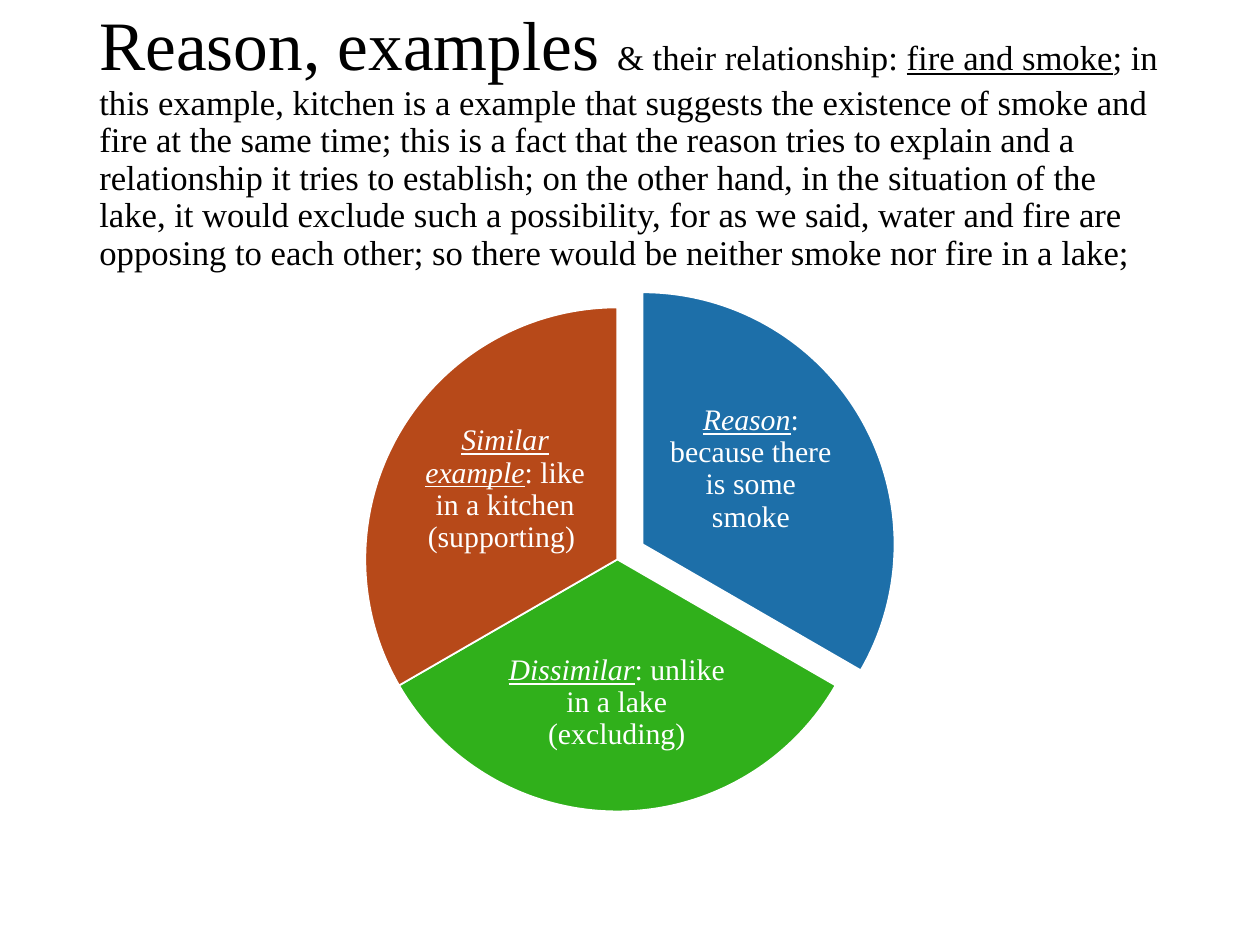
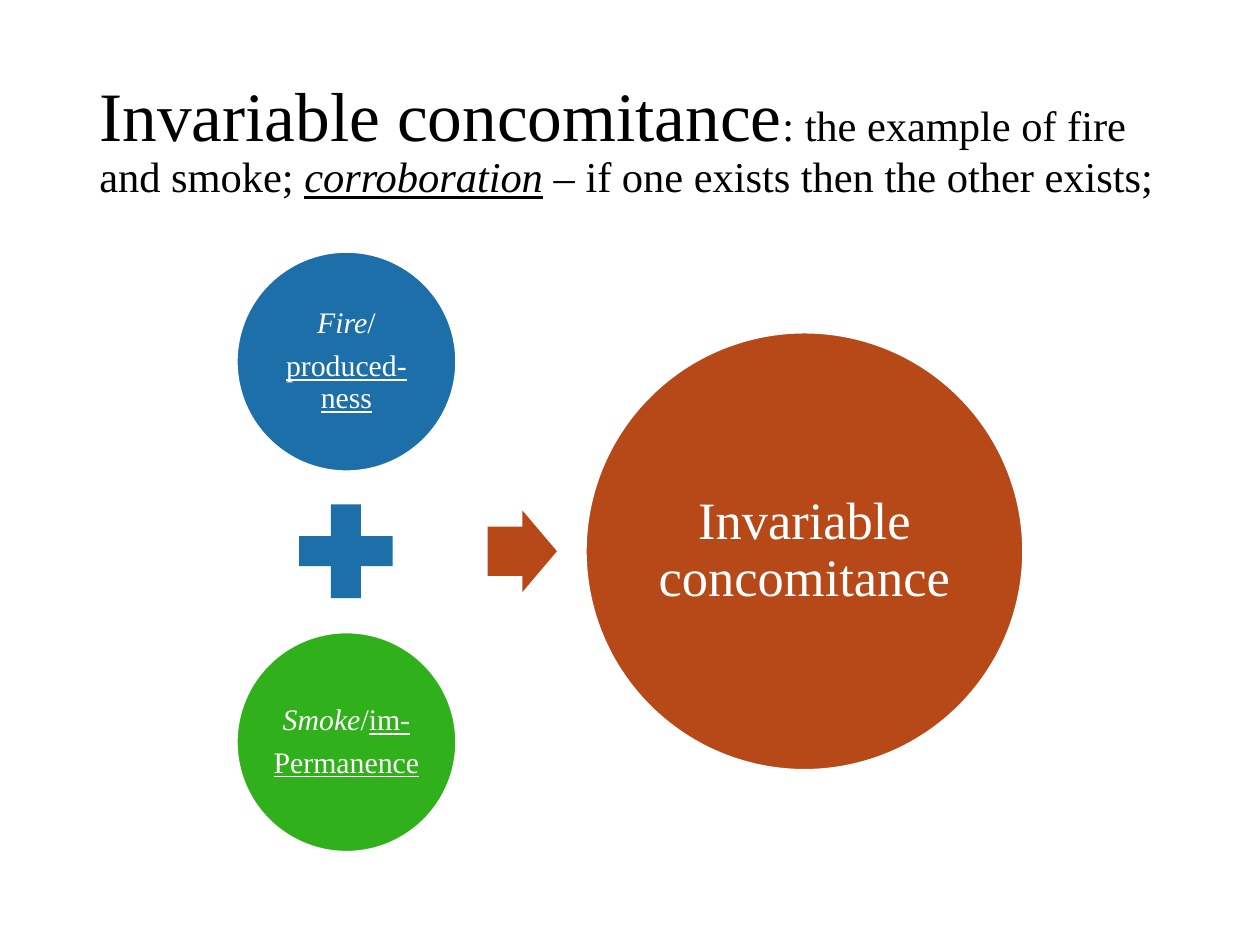
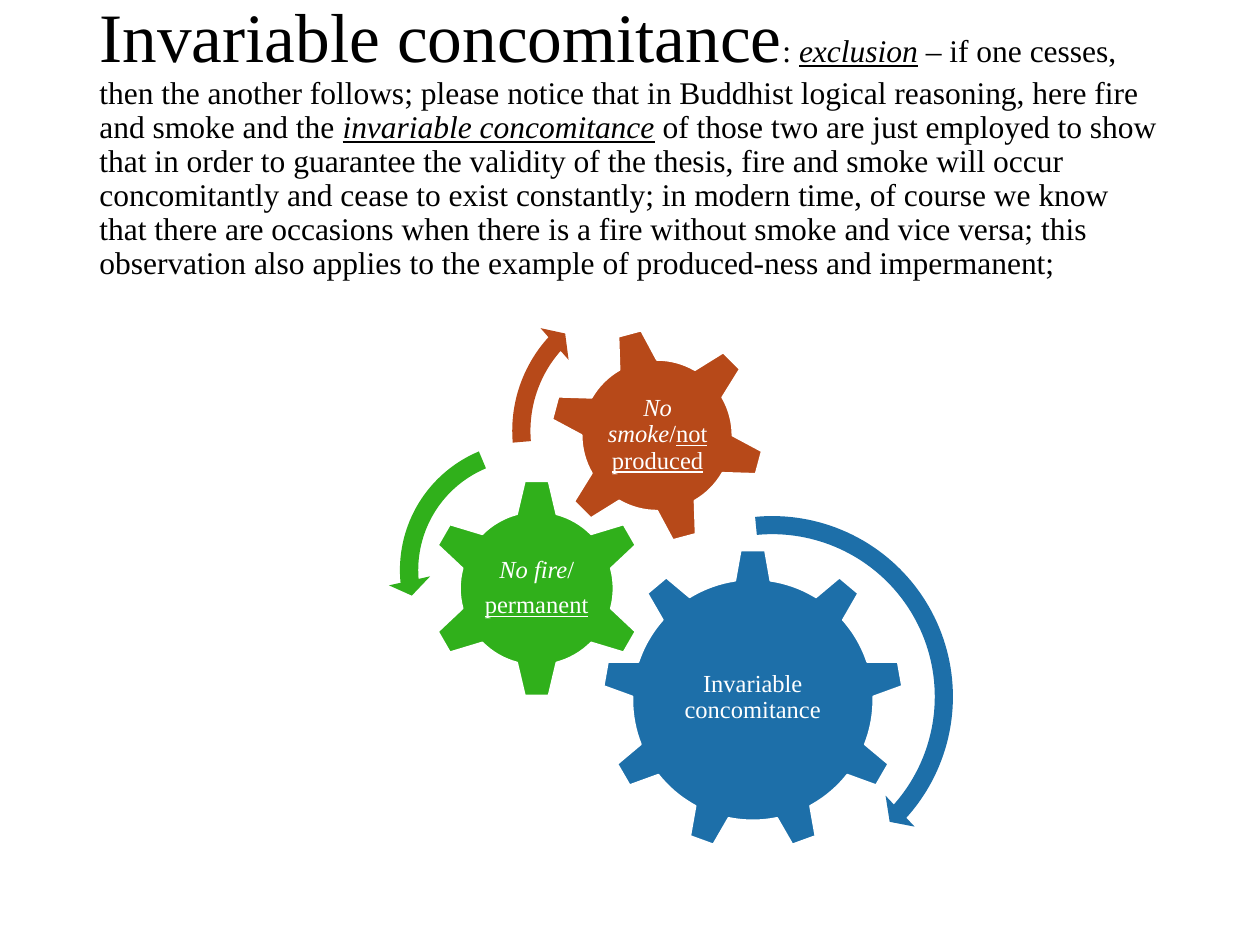
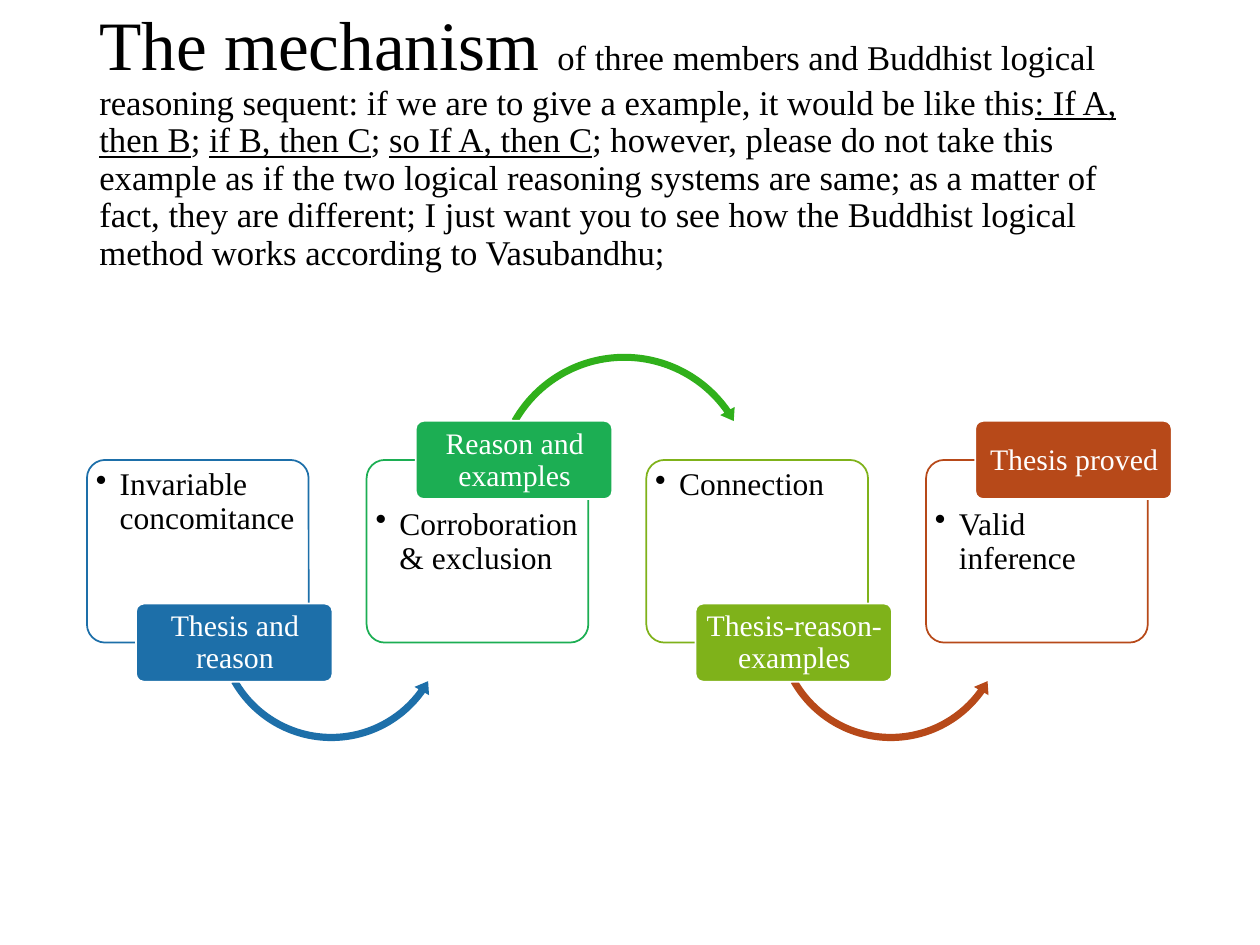
from dataclasses import dataclass
from math import sqrt

from lxml.etree import SubElement
from pptx import Presentation
from pptx.dml.color import RGBColor
from pptx.enum.shapes import MSO_SHAPE as Shape
from pptx.enum.text import MSO_ANCHOR as Anchor, PP_ALIGN as Align
from pptx.oxml.ns import qn
from pptx.util import Pt

PX = 9144  # EMU; 100 px to the inch


@dataclass(frozen=True)
class Theme:
    font: str = "Times New Roman"
    black: str = "000000"
    white: str = "FFFFFF"
    blue: str = "1D6FA9"
    green: str = "30B01B"
    rust: str = "B74919"
    emerald: str = "1CAE53"
    lime: str = "7FB21A"
    title_size: float = 39.6
    label_size: int = 17
    gear_size: int = 14
    result_size: int = 30
    bullet_size: int = 18
    line_spacing: float = 0.9
    outline: int = 1


THEME = Theme()


def span(text, **style):
    """Pair text with its format: size, color, italic, underline."""
    return text, style


def under(text):
    return span(text, underline=True)


def slanted(text):
    return span(text, italic=True)


def term(text):
    return span(text, italic=True, underline=True)


class Deck:
    def __init__(self, theme):
        self.theme = theme
        self.file = Presentation()
        self.file.slide_width, self.file.slide_height = 1000 * PX, 750 * PX
        self.shapes = None

    def page(self, heading, detail, detail_size):
        """Start a slide with its title; the diagram that follows is grouped."""
        page = self.file.slides.add_slide(self.file.slide_layouts[6])
        self.shapes = page.shapes
        lead = span(heading, size=self.theme.title_size)
        self.text((69, 40, 862, 145), [[lead, *detail]], detail_size,
                  color=self.theme.black, align=Align.LEFT, inset=(10, 5), gap=0)
        self.shapes = page.shapes.add_group_shape().shapes

    def text(self, area, paras, size, color=None, align=Align.CENTER,
             anchor=Anchor.MIDDLE, inset=(2, 2), gap=0.35, bullet=False):
        """Add paragraphs, each a list of plain strings and spans."""
        box = self.shapes.add_textbox(*(n * PX for n in area))
        frame = box.text_frame
        frame.word_wrap = True
        frame.vertical_anchor = anchor
        frame.margin_left = frame.margin_right = inset[0] * PX
        frame.margin_top = frame.margin_bottom = inset[1] * PX
        for index, parts in enumerate(paras):
            para = frame.add_paragraph() if index else frame.paragraphs[0]
            para.alignment = align
            para.line_spacing = self.theme.line_spacing
            para.space_after = Pt(gap * size)
            if bullet:
                self.bullet(para)
            for part in parts:
                words, style = span(part) if isinstance(part, str) else part
                self.run(para, words, **{"size": size, "color": color or self.theme.white, **style})

    def run(self, para, text, size, color, italic=False, underline=False):
        run = para.add_run()
        run.text = text
        font = run.font
        font.name, font.size = self.theme.font, Pt(size)
        font.italic, font.underline = italic, underline
        font.color.rgb = RGBColor.from_string(color)

    def bullet(self, para):
        props = para._p.get_or_add_pPr()
        props.set("marL", str(19 * PX))
        props.set("indent", str(-19 * PX))
        SubElement(props, qn("a:buChar")).set("char", "•")

    def shape(self, kind, area, fill, line=None, adjust=(), turn=0, opacity=100):
        item = self.shapes.add_shape(kind, *(n * PX for n in area))
        item.shadow.inherit = False
        item.rotation = turn
        for index, value in enumerate(adjust):
            item.adjustments[index] = value
        item.fill.solid()
        item.fill.fore_color.rgb = RGBColor.from_string(fill)
        if opacity < 100:
            tint = item._element.spPr.find(qn("a:solidFill"))[0]
            SubElement(tint, qn("a:alpha")).set("val", str(opacity * 1000))
        if line:
            item.line.color.rgb = RGBColor.from_string(line)
            item.line.width = Pt(self.theme.outline)
        else:
            item.line.fill.background()

    def slice(self, left, top, size, start, sweep, fill):
        angles = [angle % 360 * 0.6 for angle in (start, start + sweep)]
        self.shape(Shape.PIE, (left, top, size, size), fill, self.theme.white, angles)

    def circle(self, left, top, size, fill, paras, text_size, inset=2):
        """Add a circle with its text in the inscribed square."""
        self.shape(Shape.OVAL, (left, top, size, size), fill, self.theme.white)
        pad = round(size * (1 - 1 / sqrt(2)) / 2)
        side = size - 2 * pad
        self.text((left + pad, top + pad, side, side), paras, text_size, inset=(inset, inset))

    def gear(self, kind, left, top, size, fill, label_area, paras, turn=0):
        self.shape(kind, (left, top, size, size), fill, self.theme.white, turn=turn)
        self.text(label_area, paras, self.theme.gear_size)

    def arc(self, kind, left, top, size, fill, thickness, head, angles):
        """Add a curved arrow; thickness and head width in thousandths, angles in degrees."""
        turns = [angle * 0.6 for angle in angles]
        self.shape(kind, (left, top, size, size), fill,
                   adjust=(thickness / 1000, *turns, head / 1000))

    def card(self, left, fill, label, point, raised):
        """Add an outlined card with a bullet; return a call that adds its label on top."""
        theme = self.theme
        self.shape(Shape.ROUNDED_RECTANGLE, (left, 365, 176, 145), theme.white,
                   fill, (0.1,), opacity=90)
        self.text((left + 3, 399 if raised else 368, 169, 107), [[point]], theme.bullet_size,
                  color=theme.black, align=Align.LEFT, anchor=Anchor.TOP,
                  inset=(4, 4), gap=0.15, bullet=True)

        def add_label():
            top = 334 if raised else 479
            self.shape(Shape.ROUNDED_RECTANGLE, (left + 39, top, 156, 62), fill,
                       theme.white, (0.1,))
            self.text((left + 41, top + 2, 153, 59), [[label]], theme.label_size, inset=(4, 2))

        return add_label


def reason_page(deck):
    theme = deck.theme
    deck.page("Reason, examples ", [
        "& their relationship: ", under("fire and smoke"),
        "; in this example, kitchen is a example that suggests the existence of smoke and fire "
        "at the same time; this is a fact that the reason tries to explain and a relationship it "
        "tries to establish; on the other hand, in the situation of the lake, it would exclude "
        "such a possibility, for as we said, water and fire are opposing to each other; so there "
        "would be neither smoke nor fire in a lake;"], 19.8)
    slices = [
        (310, 232, theme.blue, (528, 306, 136, 133), "Reason", ": because there is some smoke"),
        (290, 244, theme.green, (399, 496, 181, 124), "Dissimilar",
         ": unlike in a lake (excluding)"),
        (290, 244, theme.rust, (333, 322, 136, 133), "Similar example",
         ": like in a kitchen (supporting) "),
    ]
    sweep = 360 // len(slices)
    for index, (left, top, fill, label_area, name, detail) in enumerate(slices):
        deck.slice(left, top, 400, 270 + index * sweep, sweep, fill)
        deck.text(label_area, [[term(name), detail]], theme.label_size)


def corroboration_page(deck):
    theme = deck.theme
    deck.page("Invariable concomitance", [
        ": the example of fire and smoke; ", term("corroboration"),
        " – if one exists then the other exists;"], 24.3)
    deck.circle(188, 200, 174, theme.blue,
                [[slanted("Fire"), "/"], [under("produced-ness")]], theme.label_size)
    deck.shape(Shape.MATH_PLUS, (224, 387, 101, 101), theme.blue)
    deck.circle(188, 502, 174, theme.green,
                [[slanted("Smoke"), "/", under("im-")], [under("Permanence")]], theme.label_size)
    deck.shape(Shape.RIGHT_ARROW, (387, 405, 55, 65), theme.rust, adjust=(0.6, 0.5))
    deck.circle(465, 264, 347, theme.rust, [["Invariable concomitance"]],
                theme.result_size, inset=4)


def exclusion_page(deck):
    theme = deck.theme
    deck.page("Invariable concomitance", [
        ": ", term("exclusion"),
        " – if one cesses, then the another follows; please notice that in Buddhist logical "
        "reasoning, here fire and smoke and the ", term("invariable concomitance"),
        " of those two are just employed to show that in order to guarantee the validity of the "
        "thesis, fire and smoke will occur concomitantly and cease to exist constantly; in modern "
        "time, of course we know that there are occasions when there is a fire without smoke and "
        "vice versa; this observation also applies to the example of produced-ness and "
        "impermanent;"], 18)
    deck.gear(Shape.GEAR_9, 478, 436, 239, theme.blue, (526, 492, 143, 123),
              [["Invariable concomitance"]])
    deck.gear(Shape.GEAR_6, 339, 380, 174, theme.green, (381, 424, 90, 86),
              [[slanted("No fire"), "/"], [under("permanent")]])
    deck.gear(Shape.GEAR_6, 436, 260, 171, theme.rust, (474, 297, 96, 96),
              [[slanted("No smoke"), "/", under("not produced")]], turn=345)
    deck.arc(Shape.CIRCULAR_ARROW, 460, 400, 306, theme.blue, 47, 55, (4.98, 41.85, 264.54))
    deck.arc(Shape.LEFT_CIRCULAR_ARROW, 308, 341, 223, theme.green, 65, 75,
             (7.17, 174.82, 247.3))
    deck.arc(Shape.CIRCULAR_ARROW, 397, 222, 240, theme.rust, 60, 70, (6.57, 221.9, 175.14))


def mechanism_page(deck):
    theme = deck.theme
    deck.page("The mechanism ", [
        "of three members and Buddhist logical reasoning sequent: if we are to give a example, "
        "it would be like this", under(": If A, then B"), "; ", under("if B, then C"), "; ",
        under("so If A, then C"),
        "; however, please do not take this example as if the two logical reasoning systems are "
        "same; as a matter of fact, they are different; I just want you to see how the Buddhist "
        "logical method works according to Vasubandhu;"], 19.8)
    steps = [
        (theme.blue, theme.blue, "Thesis and reason", "Invariable concomitance"),
        (theme.emerald, theme.green, "Reason and examples", "Corroboration & exclusion"),
        (theme.lime, theme.rust, "Thesis-reason-examples", "Connection"),
        (theme.rust, None, "Thesis proved", "Valid inference"),
    ]
    for index, (fill, arc_fill, label, point) in enumerate(steps):
        left, raised = 69 + index * 222, index % 2 == 1
        add_label = deck.card(left, fill, label, point, raised)
        if arc_fill and raised:
            deck.arc(Shape.CIRCULAR_ARROW, left + 98, 277, 213, arc_fill, 26, 31,
                     (5.37, 325.04, 209.59))
        elif arc_fill:
            deck.arc(Shape.LEFT_CIRCULAR_ARROW, left + 99, 402, 190, arc_fill, 30, 35,
                     (6.05, 35.64, 150.41))
        add_label()


def main():
    deck = Deck(THEME)
    for build in (reason_page, corroboration_page, exclusion_page, mechanism_page):
        build(deck)
    deck.file.save("out.pptx")


if __name__ == "__main__":
    main()
